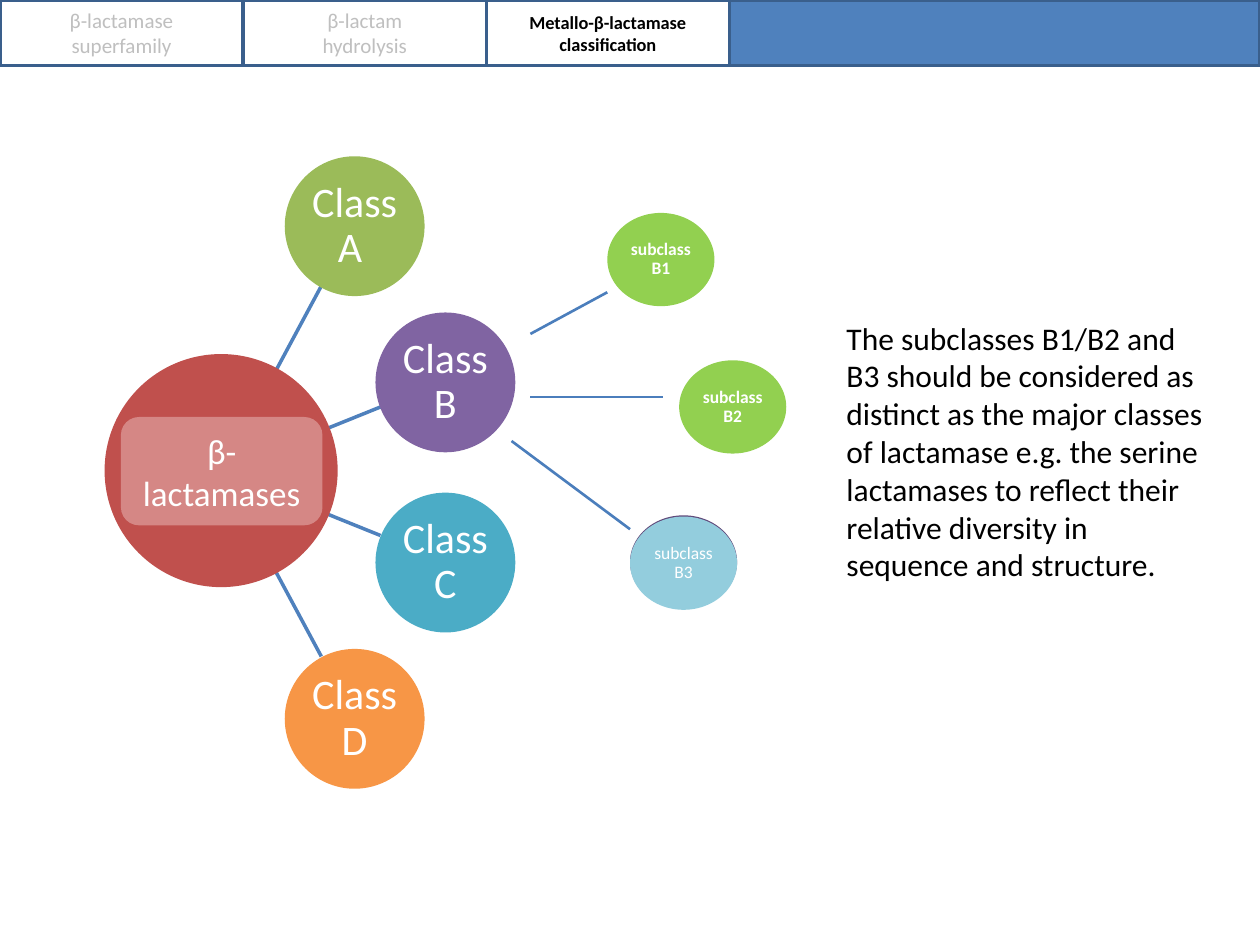
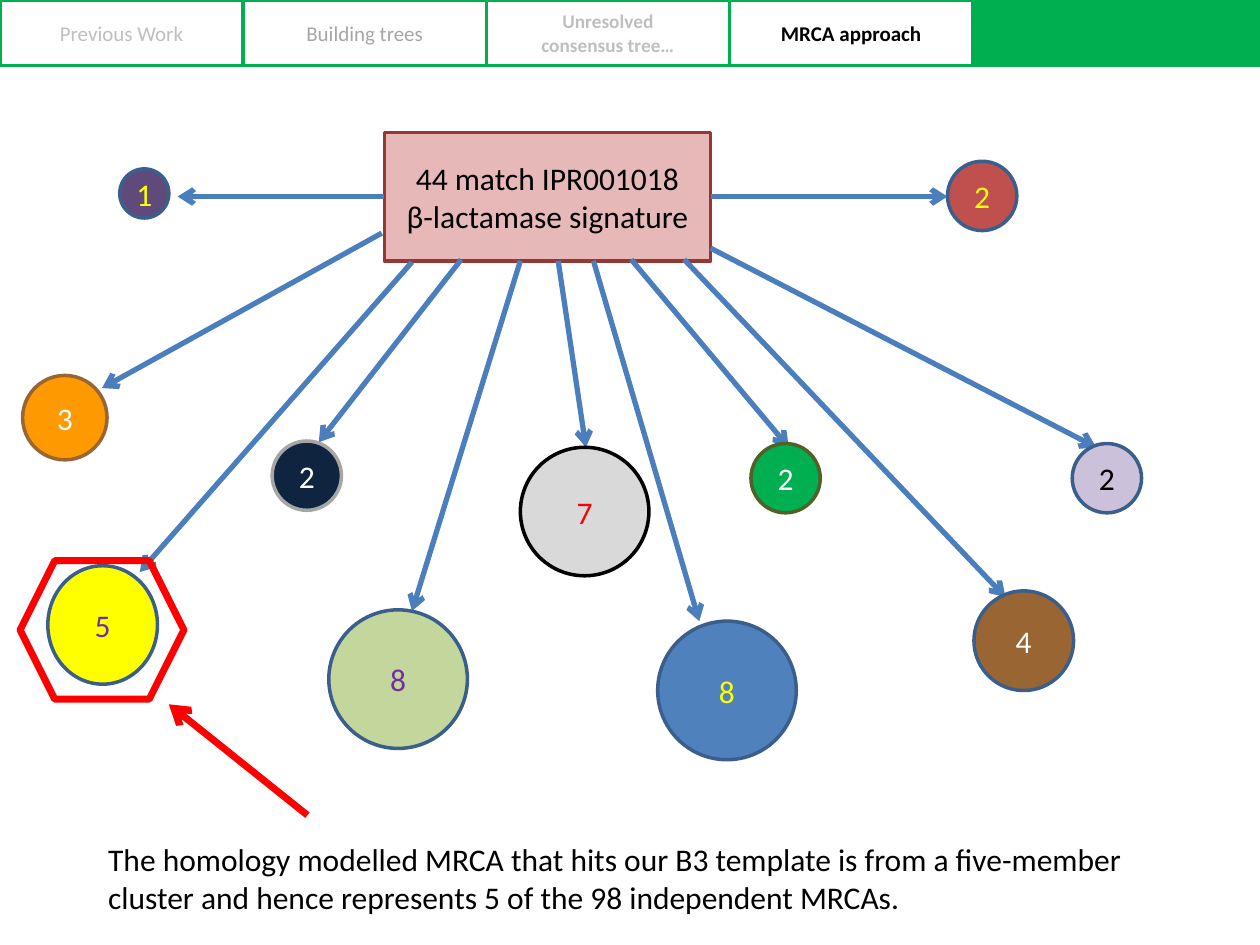
from dataclasses import dataclass
from lxml import etree
from pptx import Presentation
from pptx.dml.color import RGBColor
from pptx.enum.shapes import MSO_CONNECTOR, MSO_SHAPE
from pptx.enum.text import MSO_ANCHOR, PP_ALIGN
from pptx.oxml.ns import qn
from pptx.util import Inches, Pt

OVAL = MSO_SHAPE.OVAL
PROCESS = MSO_SHAPE.FLOWCHART_PROCESS
RECT = MSO_SHAPE.RECTANGLE
ROUNDED = MSO_SHAPE.ROUNDED_RECTANGLE
HEXAGON = MSO_SHAPE.HEXAGON
STRAIGHT = MSO_CONNECTOR.STRAIGHT
MIDDLE, TOP = MSO_ANCHOR.MIDDLE, MSO_ANCHOR.TOP
CENTER, LEFT = PP_ALIGN.CENTER, PP_ALIGN.LEFT


@dataclass(frozen=True)
class Theme:
    font: str = "Calibri"
    white: str = "FFFFFF"
    black: str = "000000"
    blue: str = "4F81BD"
    blue_edge: str = "3A5F8C"
    arrow: str = "4B7EBC"
    green: str = "00B050"
    lime: str = "92D050"
    red: str = "FF0000"
    brick: str = "C0504D"
    rose: str = "D58785"
    pink: str = "E6B9B8"
    maroon: str = "953735"
    plum: str = "604A7B"
    violet: str = "7030A0"
    yellow: str = "FFFF00"
    brown: str = "996633"
    pale: str = "BFBFBF"
    grey: str = "A6A6A6"
    body: float = 18
    root: float = 20
    node: float = 24
    leaf: float = 10
    tab: float = 12
    tab_small: float = 11
    tab_long: float = 10.5


T = Theme()
TAB_W, BAND_H = 1.93, 0.52


def add_item(s, kind, box, fill=None, line=None, width=2, text="", size=T.body,
             color=T.black, bold=False, align=CENTER, anchor=MIDDLE,
             inset=(0, 0), spacing=1):
    box = [Inches(v) for v in box]
    if kind is None:
        sp = s.shapes.add_textbox(*box)
    else:
        sp = s.shapes.add_shape(kind, *box)
        sp.shadow.inherit = False
        for part, value in ((sp.fill, fill), (sp.line.fill, line)):
            if value:
                part.solid()
                part.fore_color.rgb = RGBColor.from_string(value)
            else:
                part.background()
        if line:
            sp.line.width = Pt(width)
    if text:
        tf = sp.text_frame
        dx, dy = (Inches(v) for v in inset)
        frame = {"word_wrap": True, "vertical_anchor": anchor, "margin_left": dx,
                 "margin_right": dx, "margin_top": dy, "margin_bottom": dy}
        for name, value in frame.items():
            setattr(tf, name, value)
        for i, words in enumerate(text.split("\n")):
            p = tf.add_paragraph() if i else tf.paragraphs[0]
            p.alignment, p.line_spacing = align, spacing
            r = p.add_run()
            r.text = words
            for name, value in {"name": T.font, "size": Pt(size), "bold": bold}.items():
                setattr(r.font, name, value)
            r.font.color.rgb = RGBColor.from_string(color)
    return sp


def add_line(s, start, end, color=T.arrow, width=3, arrow=True):
    c = s.shapes.add_connector(STRAIGHT, *(Inches(v) for v in (*start, *end)))
    c.line.color.rgb = RGBColor.from_string(color)
    c.line.width = Pt(width)
    if arrow:
        etree.SubElement(c.line._get_or_add_ln(), qn("a:tailEnd"), type="arrow")
    etree.SubElement(c._element.spPr, qn("a:effectLst"))
    return c


prs = Presentation()
prs.slide_width, prs.slide_height = Inches(10), Inches(7.5)

bands = [
    (T.blue, T.blue_edge, [
        ("β-lactamase superfamily", T.tab, T.pale, False),
        ("β-lactam hydrolysis", T.tab, T.pale, False),
        ("Metallo-β-lactamase classification", T.tab_long, T.black, True)]),
    (T.green, T.green, [
        ("Previous Work", T.tab, T.pale, False),
        ("Building trees", T.tab, T.grey, False),
        ("Unresolved consensus tree…", T.tab_small, T.pale, True),
        ("MRCA approach", T.tab, T.black, True)]),
]
slides = []
for fill, edge, tabs in bands:
    s = prs.slides.add_slide(prs.slide_layouts[6])
    slides.append(s)
    add_item(s, PROCESS, (0, 0, 10, BAND_H), fill, edge)
    for i, (text, size, color, bold) in enumerate(tabs):
        add_item(s, PROCESS, (i * TAB_W, 0, TAB_W, BAND_H), T.white, edge, text=text,
                 size=size, color=color, bold=bold, inset=(0.32, 0))
classes_slide, mrca_slide = slides

s = classes_slide
for start, end in [((4.21, 2.65), (4.82, 2.32)), ((4.06, 3.5), (5, 4.2)),
                   ((4.21, 3.15), (5.26, 3.15))]:
    add_line(s, start, end, width=1.5, arrow=False)

ROOT_Y = 3.74
for x1, dy1, x2, dy2 in [(2.11, 0.65, 2.55, 1.47), (2.4, 0.26, 3.02, 0.51)]:
    for side in (-1, 1):
        add_line(s, (x1, ROOT_Y + side * dy1), (x2, ROOT_Y + side * dy2),
                 T.blue, 2, False)

add_item(s, OVAL, (0.83, 2.81, 1.85, 1.85), T.brick)
for text, x, y, fill in [("Class A ", 2.26, 1.24, "9BBB59"),
                         ("Class B", 2.98, 2.48, "8064A2"),
                         ("Class C", 2.98, 3.91, "4BACC6"),
                         ("Class D", 2.26, 5.15, "F79646")]:
    add_item(s, OVAL, (x, y, 1.11, 1.11), fill, text=text, size=T.node,
             color=T.white, inset=(0.02, 0.02), spacing=0.9)
add_item(s, ROUNDED, (0.96, 3.31, 1.6, 0.86), T.rose, text="β- lactamases",
         size=T.root, color=T.white, inset=(0.1, 0.05))

add_item(s, OVAL, (5, 4.09, 0.85, 0.74), T.plum)
for text, x, y, fill, bold in [("subclass B1", 4.82, 1.69, T.lime, True),
                               ("subclass B2", 5.39, 2.86, T.lime, True),
                               ("subclass B3", 5, 4.1, "93CDDD", False)]:
    add_item(s, OVAL, (x, y, 0.85, 0.74), fill, text=text, size=T.leaf,
             color=T.white, bold=bold, inset=(0.01, 0.01), spacing=0.9)

add_item(s, None, (6.62, 2.48, 3.07, 2.22), align=LEFT, anchor=TOP, inset=(0.1, 0.05),
         text="The subclasses B1/B2 and B3 should be considered as distinct as the "
              "major classes of lactamase e.g. the serine lactamases to reflect their "
              "relative diversity in sequence and structure.")

s = mrca_slide
signature = add_item(s, RECT, (3.05, 1.05, 2.59, 1.02), T.pink, T.maroon,
                     text="44 match IPR001018\nβ-lactamase signature")
for site, start, end in [(1, (3.05, 1.56), (1.41, 1.56)), (3, (5.64, 1.56), (7.52, 1.56))]:
    add_line(s, start, end).begin_connect(signature, site)
for start, end in [((3.03, 1.85), (0.81, 3.08)), ((3.27, 2.08), (1.11, 4.54)),
                   ((3.66, 2.06), (2.53, 3.51)), ((4.13, 2.07), (3.27, 4.85)),
                   ((4.43, 2.07), (4.65, 3.55)), ((4.71, 2.07), (5.55, 4.93)),
                   ((5.01, 2.06), (6.26, 3.55)), ((5.43, 2.06), (7.98, 4.74)),
                   ((5.64, 1.97), (8.7, 3.55))]:
    add_line(s, start, end)

clusters = [
    ("1", 0.95, 1.34, 0.39, 0.39, T.plum, T.blue_edge, T.yellow),
    ("2", 7.52, 1.28, 0.55, 0.55, T.brick, T.blue_edge, T.yellow),
    ("3", 0.18, 2.98, 0.67, 0.67, "FF9900", T.brown, T.white),
    ("2", 2.16, 3.5, 0.55, 0.55, "0F243E", T.grey, T.white),
    ("7", 4.13, 3.55, 1.02, 1.02, "D9D9D9", T.black, T.red),
    ("2", 5.96, 3.52, 0.55, 0.55, T.green, "4F6228", T.white),
    ("2", 8.51, 3.52, 0.55, 0.55, "CCC1DA", T.blue_edge, T.black),
    ("5", 0.38, 4.49, 0.87, 0.94, T.yellow, T.blue_edge, T.violet),
    ("8", 2.61, 4.84, 1.1, 1.1, "C3D69B", T.blue_edge, T.violet),
    ("8", 5.22, 4.93, 1.1, 1.1, T.blue, T.blue_edge, T.yellow),
    ("4", 7.73, 4.69, 0.79, 0.79, T.brown, T.blue_edge, T.white),
]
for count, x, y, w, h, fill, edge, color in clusters:
    add_item(s, OVAL, (x, y, w, h), fill, edge, text=count, color=color)

add_item(s, None, (0.76, 6.62, 8.81, 0.71), align=LEFT, anchor=TOP, inset=(0.1, 0.05),
         text="The homology modelled MRCA that hits our B3 template is from a "
              "five-member cluster and hence represents 5 of the 98 independent MRCAs.")
add_item(s, HEXAGON, (0.16, 4.45, 1.3, 1.1), line=T.red, width=4)
add_line(s, (2.44, 6.47), (1.34, 5.59), T.red, 4)

prs.save("out.pptx")
